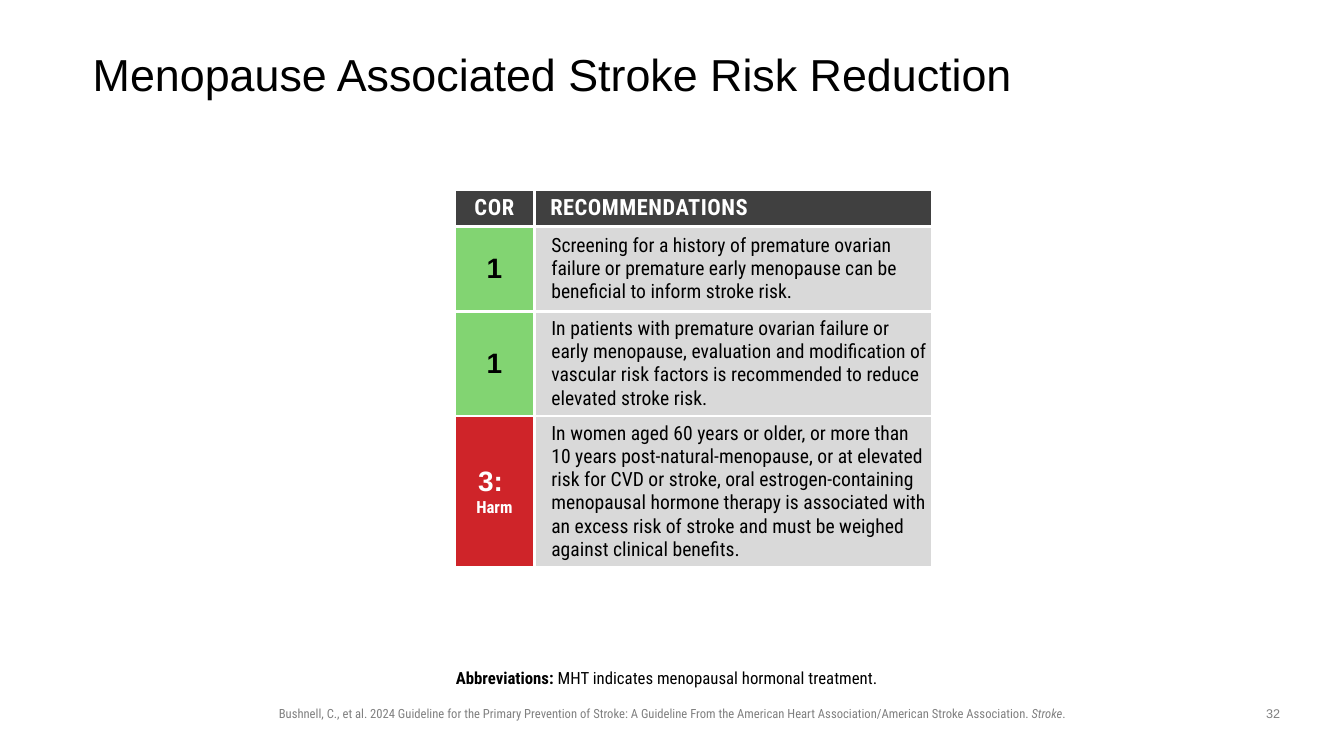
import pptx
import pptx.dml.color
import pptx.enum.text
import pptx.oxml
import pptx.oxml.ns
import pptx.util

SLIDE_WIDTH = pptx.util.Inches(13.333)
SLIDE_HEIGHT = pptx.util.Inches(7.5)
ALIGN = pptx.enum.text.PP_ALIGN
ANCHOR = pptx.enum.text.MSO_ANCHOR
CONDENSED = "Roboto Condensed"
BLACK, WHITE, GRAY = "000000", "FFFFFF", "808080"
DARK, PALE, GREEN, RED = "404040", "D9D9D9", "82D472", "CF2429"

FOOTER = {"name": CONDENSED, "size": 9, "color": GRAY}
NOTE = {"name": CONDENSED, "size": 12, "color": BLACK}
HEADER = {"name": CONDENSED, "size": 16, "bold": True, "color": WHITE}
CLASS = {"name": "Arial", "size": 20, "bold": True, "color": BLACK}
ADVICE = {"name": CONDENSED, "size": 14, "bold": False, "color": BLACK}

COLUMN_WIDTHS = (5.92, 29.63)
ROW_HEIGHTS = (4.27, 11.2, 13.87, 18)
RECOMMENDATIONS = (
    (GREEN, [("1", CLASS)],
     "Screening for a history of premature ovarian failure or premature early "
     "menopause can be beneficial to inform stroke risk."),
    (GREEN, [("1", CLASS)],
     "In patients with premature ovarian failure or early menopause, evaluation and "
     "modification of vascular risk factors is recommended to reduce elevated stroke risk."),
    (RED, [("3: \n", CLASS | {"color": WHITE}),
           ("Harm", NOTE | {"bold": True, "color": WHITE})],
     "In women aged 60 years or older, or more than 10 years post-natural-menopause, "
     "or at elevated risk for CVD or stroke, oral estrogen-containing menopausal hormone "
     "therapy is associated with an excess risk of stroke and must be weighed against "
     "clinical benefits."),
)


def across(percent):
    return round(SLIDE_WIDTH * percent / 100)


def down(percent):
    return round(SLIDE_HEIGHT * percent / 100)


def area(left, top, width, height):
    """Turn percentages of the slide into left, top, width and height."""
    return across(left), down(top), across(width), down(height)


def color(hex_string):
    return pptx.dml.color.RGBColor.from_string(hex_string)


def set_values(target, values):
    for name, value in values.items():
        setattr(target, name, value)


def set_margins(target, left, top, right, bottom):
    sides = ("margin_left", "margin_top", "margin_right", "margin_bottom")
    inches = map(pptx.util.Inches, (left, top, right, bottom))
    set_values(target, dict(zip(sides, inches)))


def write(paragraph, pieces, alignment, indent=0, spacing=0):
    """Fill a paragraph with (text, format) pieces; indent is in inches, spacing in points."""
    properties = paragraph._p.get_or_add_pPr()
    properties.set("marL", str(pptx.util.Inches(indent)))
    properties.set("indent", "0")
    properties.append(pptx.oxml.parse_xml(f"<a:buNone {pptx.oxml.ns.nsdecls('a')}/>"))
    paragraph.alignment = alignment
    paragraph.space_before = pptx.util.Pt(0)
    for text, style in pieces:
        run = paragraph.add_run()
        run.text = text.rstrip("\n")
        values = dict(style)
        run.font.color.rgb = color(values.pop("color"))
        values["size"] = pptx.util.Pt(values["size"])
        set_values(run.font, values)
        if spacing:
            run._r.get_or_add_rPr().set("spc", str(round(spacing * 100)))
        if text.endswith("\n"):
            paragraph.add_line_break()


def fill_placeholder(shape, box, pieces, alignment, anchor, margins):
    set_values(shape, dict(zip(("left", "top", "width", "height"), area(*box))))
    frame = shape.text_frame
    set_values(frame, {"word_wrap": True, "vertical_anchor": anchor,
                       "auto_size": pptx.enum.text.MSO_AUTO_SIZE.NONE})
    set_margins(frame, *margins)
    write(frame.paragraphs[0], pieces, alignment)
    frame.paragraphs[0].line_spacing = 0.9


def add_label(slide, box, pieces):
    frame = slide.shapes.add_textbox(*area(*box)).text_frame
    frame.word_wrap = True
    write(frame.paragraphs[0], pieces, ALIGN.CENTER)


def add_borders(cell):
    properties = cell._tc.get_or_add_tcPr()
    width = pptx.util.Pt(2.25)
    for position, side in enumerate(("lnL", "lnR", "lnT", "lnB")):
        properties.insert(position, pptx.oxml.parse_xml(
            f'<a:{side} {pptx.oxml.ns.nsdecls("a")} w="{width}"><a:solidFill>'
            f'<a:srgbClr val="{WHITE}"/></a:solidFill></a:{side}>'))


def fill_cell(cell, fill, pieces, alignment, indent=0, spacing=0):
    cell.fill.solid()
    cell.fill.fore_color.rgb = color(fill)
    cell.vertical_anchor = ANCHOR.MIDDLE
    add_borders(cell)
    write(cell.text_frame.paragraphs[0], pieces, alignment, indent, spacing)


def add_recommendations(slide):
    box = area(33.83, 25.07, sum(COLUMN_WIDTHS), sum(ROW_HEIGHTS))
    table = slide.shapes.add_table(len(ROW_HEIGHTS), len(COLUMN_WIDTHS), *box).table
    set_values(table, {"first_row": False, "horz_banding": False})
    for column, width in zip(table.columns, COLUMN_WIDTHS):
        column.width = across(width)
    for row, height in zip(table.rows, ROW_HEIGHTS):
        row.height = down(height)
    fill_cell(table.cell(0, 0), DARK, [("COR", HEADER)], ALIGN.CENTER, spacing=0.5)
    fill_cell(table.cell(0, 1), DARK, [("RECOMMENDATIONS", HEADER)], ALIGN.LEFT, 0.06, 0.4)
    for row, (fill, label, advice) in enumerate(RECOMMENDATIONS, start=1):
        label_cell, advice_cell = table.cell(row, 0), table.cell(row, 1)
        for cell in (label_cell, advice_cell):
            set_margins(cell, 0.05, 0.05, 0.05, 0.05)
        fill_cell(label_cell, fill, label, ALIGN.CENTER)
        fill_cell(advice_cell, PALE, [(advice, ADVICE)], ALIGN.LEFT, 0.12)


def main():
    presentation = pptx.Presentation()
    set_values(presentation, {"slide_width": SLIDE_WIDTH, "slide_height": SLIDE_HEIGHT})
    slide = presentation.slides.add_slide(presentation.slide_layouts[1])
    add_label(slide, (17.7, 92.67, 64.65, 3.33), [
        ("Bushnell, C., et al. 2024 Guideline for the Primary Prevention of Stroke: "
         "A Guideline From the American Heart Association/American Stroke Association. ", FOOTER),
        ("Stroke", FOOTER | {"italic": True}),
        (".", FOOTER),
    ])
    fill_placeholder(
        slide.shapes.title, (6.9, 5.33, 86.25, 9.6),
        [("Menopause Associated Stroke Risk Reduction",
          {"name": "Arial", "size": 32, "color": BLACK})],
        ALIGN.LEFT, ANCHOR.MIDDLE, (0, 0, 0, 0))
    add_recommendations(slide)
    fill_placeholder(
        slide.placeholders[1], (14.1, 85.6, 71.78, 6.13),
        [("Abbreviations: ", NOTE | {"bold": True}),
         ("MHT indicates menopausal hormonal treatment.", NOTE)],
        ALIGN.CENTER, ANCHOR.BOTTOM, (0, 0.05, 0.1, 0.05))
    add_label(slide, (93.15, 92.67, 3.15, 3.47), [("32", FOOTER | {"name": "Arial"})])
    presentation.save("out.pptx")


if __name__ == "__main__":
    main()
